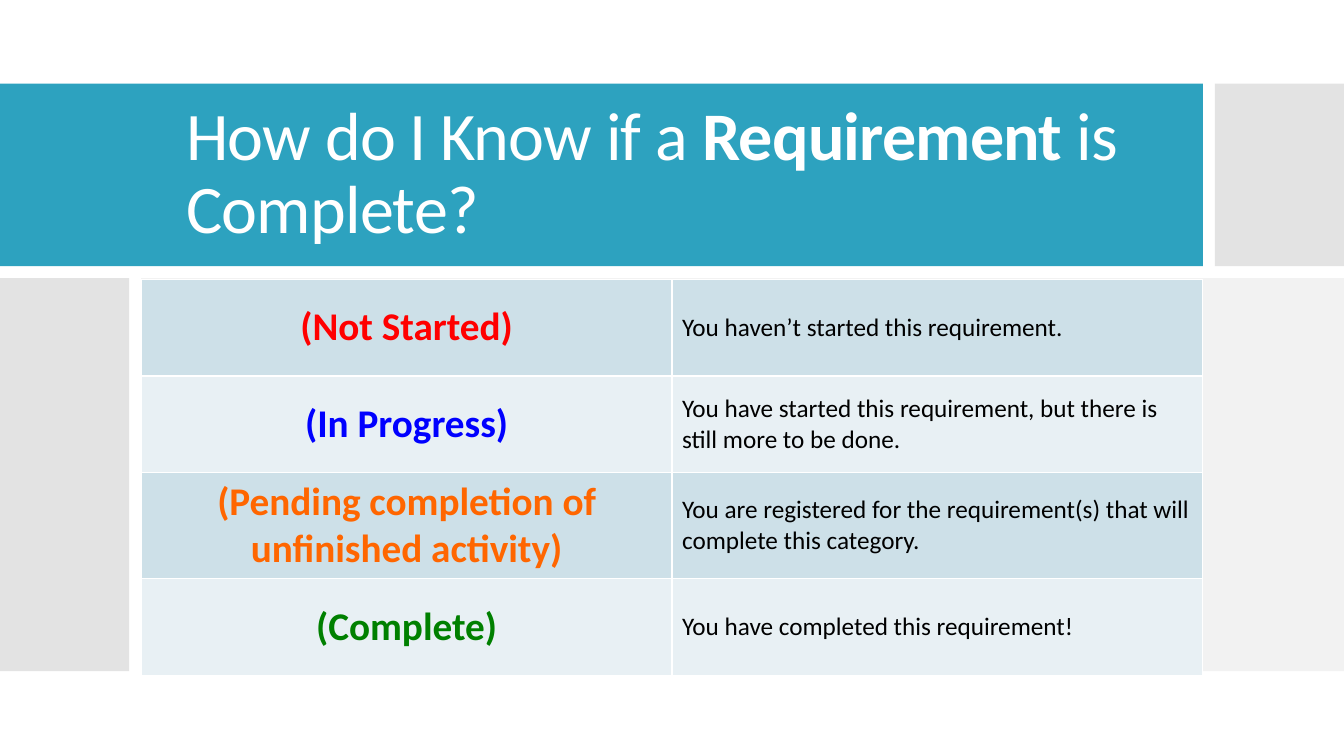
from dataclasses import dataclass

from lxml import etree
from pptx import Presentation
from pptx.dml.color import RGBColor
from pptx.enum.shapes import MSO_SHAPE
from pptx.enum.text import MSO_ANCHOR, PP_ALIGN
from pptx.oxml.ns import qn
from pptx.util import Inches, Pt

RECTANGLE = MSO_SHAPE.RECTANGLE
MIDDLE = MSO_ANCHOR.MIDDLE
LEFT = PP_ALIGN.LEFT
CENTER = PP_ALIGN.CENTER


@dataclass(frozen=True)
class Theme:
    font: str = "Calibri"
    white: str = "FFFFFF"
    black: str = "000000"
    teal: str = "2DA2BF"
    gray: str = "E3E3E3"
    pale_gray: str = "F2F2F2"
    bands: tuple = ("CDE0E8", "E8F0F4")
    title_size: float = 48.6
    status_size: float = 28
    meaning_size: float = 18


THEME = Theme()

PANELS = [
    (0, 0.83, 11.93, 1.81, THEME.teal),
    (1.4, 2.76, 11.93, 3.9, THEME.pale_gray),
    (12.05, 0.83, 1.28, 1.81, THEME.gray),
    (0, 2.76, 1.28, 3.9, THEME.gray),
]

STATUSES = [
    ("(Not Started)", "FF0000", "You haven’t started this requirement.", 0.96),
    ("(In Progress)", "0000FF",
     "You have started this requirement, but there is still more to be done.", 0.96),
    ("(Pending completion of unfinished activity)", "FF6600",
     "You are registered for the requirement(s) that will complete this category.", 1.05),
    ("(Complete)", "008000", "You have completed this requirement!", 0.96),
]


def add_run(paragraph, text, size, color, bold=False):
    run = paragraph.add_run()
    run.text = text
    run.font.name = THEME.font
    run.font.size = Pt(size)
    run.font.bold = bold
    run.font.color.rgb = RGBColor.from_string(color)
    return run


def add_panel(slide, left, top, width, height, color):
    shape = slide.shapes.add_shape(
        RECTANGLE, Inches(left), Inches(top), Inches(width), Inches(height))
    shape.shadow.inherit = False
    shape.fill.solid()
    shape.fill.fore_color.rgb = RGBColor.from_string(color)
    shape.line.fill.background()


def add_title(slide):
    box = slide.shapes.add_textbox(Inches(1.75), Inches(1.19), Inches(9.82), Inches(1.09))
    frame = box.text_frame
    frame.word_wrap = True
    frame.vertical_anchor = MIDDLE
    paragraph = frame.paragraphs[0]
    paragraph.line_spacing = 0.9
    for text, bold in (("How do I Know if a ", False), ("Requirement", True),
                       (" is Complete?", False)):
        run = add_run(paragraph, text, THEME.title_size, THEME.white, bold)
        run.font._element.set("spc", "-60")


def add_borders(cell):
    properties = cell._tc.get_or_add_tcPr()
    for side in ("a:lnL", "a:lnR", "a:lnT", "a:lnB"):
        line = etree.SubElement(properties, qn(side), w=str(Pt(1)))
        fill = etree.SubElement(line, qn("a:solidFill"))
        etree.SubElement(fill, qn("a:srgbClr"), val=THEME.white)


def fill_cell(cell, text, size, color, band, alignment, bold):
    add_borders(cell)
    cell.fill.solid()
    cell.fill.fore_color.rgb = RGBColor.from_string(band)
    cell.vertical_anchor = MIDDLE
    paragraph = cell.text_frame.paragraphs[0]
    paragraph.alignment = alignment
    add_run(paragraph, text, size, color, bold)


def add_status_table(slide):
    table = slide.shapes.add_table(
        len(STATUSES), 2, Inches(1.4), Inches(2.77), Inches(10.53), Inches(3.93)).table
    table.first_row = False
    table.horz_banding = False
    for index, (status, color, meaning, height) in enumerate(STATUSES):
        table.rows[index].height = Inches(height)
        band = THEME.bands[index % 2]
        fill_cell(table.cell(index, 0), status, THEME.status_size, color, band, CENTER, True)
        fill_cell(table.cell(index, 1), meaning, THEME.meaning_size, THEME.black,
                  band, LEFT, False)


def main():
    presentation = Presentation()
    presentation.slide_width = Inches(13.33)
    presentation.slide_height = Inches(7.5)
    slide = presentation.slides.add_slide(presentation.slide_layouts[6])
    for panel in PANELS:
        add_panel(slide, *panel)
    add_title(slide)
    add_status_table(slide)
    presentation.save("out.pptx")


if __name__ == "__main__":
    main()
